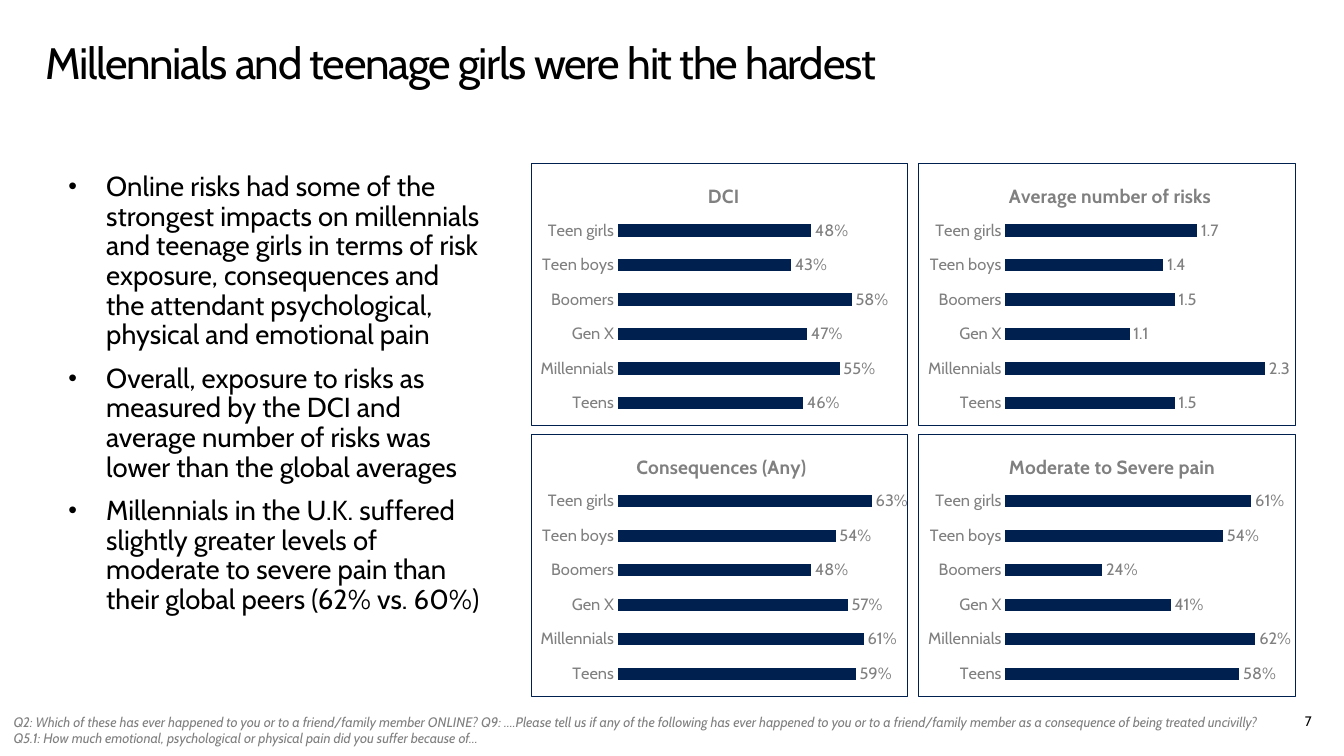
"""Build the slide on how online risks hit millennials and teenage girls."""
from dataclasses import dataclass

from lxml.etree import SubElement
from pptx import Presentation
from pptx.chart.data import CategoryChartData as ChartData
from pptx.dml.color import RGBColor
from pptx.enum.chart import XL_CHART_TYPE as ChartType
from pptx.enum.chart import XL_LABEL_POSITION as LabelPosition
from pptx.enum.chart import XL_TICK_MARK as TickMark
from pptx.enum.text import MSO_ANCHOR as Anchor
from pptx.enum.text import MSO_AUTO_SIZE as AutoSize
from pptx.enum.text import PP_ALIGN as Align
from pptx.oxml import parse_xml
from pptx.oxml.ns import nsdecls, qn
from pptx.util import Cm, Pt


@dataclass(frozen=True)
class Theme:
    font: str = "Cabin"
    black: str = "000000"
    gray: str = "808080"
    navy: str = "002050"
    white: str = "FFFFFF"
    title: int = 32
    body: int = 20
    chart_title: int = 14
    label: int = 12
    note: int = 10


theme = Theme()


def style_font(font, size, color, bold=False, italic=False):
    font.name = theme.font
    font.size = Pt(size)
    font.bold = bold
    font.italic = italic
    font.color.rgb = RGBColor.from_string(color)


def set_layout(parent, index, **fractions):
    for old_layout in parent.findall(qn("c:layout")):
        parent.remove(old_layout)
    layout = parse_xml(f"<c:layout {nsdecls('c')}><c:manualLayout/></c:layout>")
    manual = layout[0]
    if "w" in fractions:
        SubElement(manual, qn("c:layoutTarget")).set("val", "inner")
    for mode in ("xMode", "yMode"):
        SubElement(manual, qn(f"c:{mode}")).set("val", "edge")
    for name, value in fractions.items():
        SubElement(manual, qn(f"c:{name}")).set("val", str(value))
    parent.insert(index, layout)


presentation = Presentation()
presentation.slide_width, presentation.slide_height = Cm(34.54), Cm(19.43)
slide = presentation.slides.add_slide(presentation.slide_layouts[1])
title, body = slide.shapes.title, slide.placeholders[1]

places = (
    (title, (0.76, 0.81, 33.02, 2.54)),
    (body, (1.35, 4.19, 11.46, 13.59)),
)
for shape, place in places:
    shape.left, shape.top, shape.width, shape.height = map(Cm, place)
    frame = shape.text_frame
    frame.word_wrap = True
    frame.auto_size = AutoSize.NONE
    frame.vertical_anchor = Anchor.TOP
    frame.margin_left = frame.margin_right = Cm(0.41)
    frame.margin_top = frame.margin_bottom = Cm(0.25)

paragraph = title.text_frame.paragraphs[0]
paragraph.alignment = Align.LEFT
paragraph.line_spacing = 0.9
run = paragraph.add_run()
run.text = "Millennials and teenage girls were hit the hardest"
style_font(run.font, theme.title, theme.black)
run.font._element.set("spc", "-100")

findings = (
    "Online risks had some of the strongest impacts on millennials and teenage girls "
    "in terms of risk exposure, consequences and the attendant psychological, "
    "physical and emotional pain",
    "Overall, exposure to risks as measured by the DCI and average number of risks "
    "was lower than the global averages",
    "Millennials in the U.K. suffered slightly greater levels of moderate to severe "
    "pain than their global peers (62% vs. 60%)",
)
for number, finding in enumerate(findings):
    frame = body.text_frame
    paragraph = frame.add_paragraph() if number else frame.paragraphs[0]
    paragraph.line_spacing = 0.9
    paragraph.space_before, paragraph.space_after = Pt(4), Pt(6)
    properties = paragraph._p.get_or_add_pPr()
    properties.set("marL", str(Cm(0.97)))
    properties.set("indent", str(-Cm(0.97)))
    SubElement(properties, qn("a:buSzPct")).set("val", "90000")
    SubElement(properties, qn("a:buFont")).set("typeface", "Arial")
    SubElement(properties, qn("a:buChar")).set("char", "•")
    run = paragraph.add_run()
    run.text = finding
    style_font(run.font, theme.body, theme.black)

question_note = (
    "Q2: Which of these has ever happened to you or to a friend/family member ONLINE? "
    "Q9: ….Please tell us if any of the following has ever happened to you or to a "
    "friend/family member as a consequence of being treated uncivilly? "
    "Q5.1: How much emotional, psychological or physical pain did you suffer because of…"
)
small_texts = (
    ("7", (25.91, 18.01, 8.05, 1.04), Align.RIGHT, Anchor.MIDDLE, theme.black, False),
    (question_note, (0.1, 18.21, 32.64, 1.22), Align.LEFT, Anchor.TOP, theme.gray, True),
)
for text, place, alignment, anchor, color, italic in small_texts:
    frame = slide.shapes.add_textbox(*map(Cm, place)).text_frame
    frame.word_wrap = True
    frame.vertical_anchor = anchor
    paragraph = frame.paragraphs[0]
    paragraph.alignment = alignment
    run = paragraph.add_run()
    run.text = text
    style_font(run.font, theme.note, color, italic=italic)

groups = ("Teens", "Millennials", "Gen X", "Boomers", "Teen boys", "Teen girls")
panels = (
    ("DCI", 0.46, (0.46, 0.55, 0.47, 0.58, 0.43, 0.48), "0%", 0.7),
    ("Average number of risks", 0.23, (1.5, 2.3, 1.1, 1.5, 1.4, 1.7), "0.0", 2.5),
    ("Consequences (Any)", 0.27, (0.59, 0.61, 0.57, 0.48, 0.54, 0.63), "0%", 0.7),
    ("Moderate to Severe pain", 0.23, (0.58, 0.62, 0.41, 0.24, 0.54, 0.61), "0%", 0.7),
)
for position, (heading, heading_x, values, number_format, maximum) in enumerate(panels):
    row, column = divmod(position, 2)
    data = ChartData(number_format=number_format)
    data.categories = groups
    data.add_series("Series 1", values)
    chart = slide.shapes.add_chart(
        ChartType.BAR_CLUSTERED,
        Cm(13.64 + 9.96 * column), Cm(4.19 + 6.96 * row), Cm(9.7), Cm(6.76), data,
    ).chart
    style_font(chart.font, theme.label, theme.gray)
    chart.has_legend = False
    chart.has_title = True
    run = chart.chart_title.text_frame.paragraphs[0].add_run()
    run.text = heading
    style_font(run.font, theme.chart_title, theme.gray, bold=True)
    set_layout(chart.chart_title._element, 1, x=heading_x, y=0.06)

    chart_area = chart._chartSpace.find(qn("c:chart"))
    set_layout(chart_area.find(qn("c:plotArea")), 0, x=0.23, y=0.19, w=0.75, h=0.79)
    chart_area.addnext(parse_xml(
        f"<c:spPr {nsdecls('c', 'a')}><a:noFill/><a:ln w='{Pt(0.75)}'><a:solidFill>"
        f"<a:srgbClr val='{theme.navy}'/></a:solidFill></a:ln></c:spPr>"
    ))

    category_axis, value_axis = chart.category_axis, chart.value_axis
    category_axis.major_tick_mark = TickMark.NONE
    category_axis.has_major_gridlines = False
    category_axis.format.line.color.rgb = RGBColor.from_string(theme.white)
    category_axis.format.line.width = Pt(0.75)
    style_font(category_axis.tick_labels.font, theme.label, theme.gray)
    value_axis.minimum_scale, value_axis.maximum_scale = 0, maximum
    value_axis.has_major_gridlines = False
    value_axis.visible = False

    plot = chart.plots[0]
    plot.gap_width = 182
    plot.vary_by_categories = False
    fill = plot.series[0].format.fill
    fill.solid()
    fill.fore_color.rgb = RGBColor.from_string(theme.navy)
    plot.has_data_labels = True
    labels = plot.data_labels
    labels.show_value = True
    labels.position = LabelPosition.OUTSIDE_END
    labels.number_format = number_format
    labels.number_format_is_linked = False
    style_font(labels.font, theme.label, theme.gray)

presentation.save("out.pptx")
